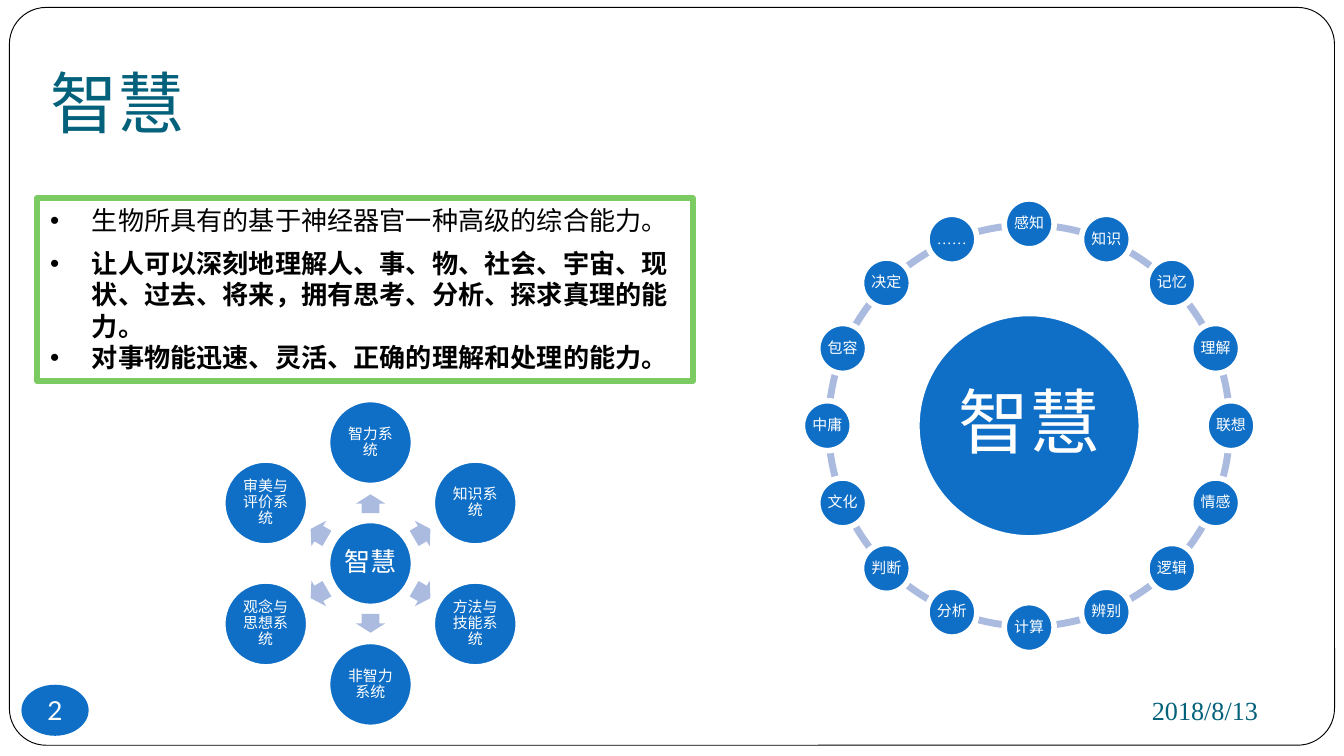
import math
import pptx
import pptx.util
import pptx.dml.color
import pptx.enum.shapes
import pptx.enum.text
import pptx.oxml.ns
from lxml import etree

HUES = {
    "blue": "0F6FC6", "pale": "ABBBDF", "teal": "04617B",
    "green": "7CCA62", "white": "FFFFFF", "black": "000000",
}
WIDE = 10
HIGH = WIDE * 9 / 16
COLS = 100
UNIT = WIDE / COLS
KIND = pptx.enum.shapes.MSO_SHAPE
ALIGN = pptx.enum.text.PP_ALIGN
ANCHOR = pptx.enum.text.MSO_ANCHOR
SERIF = "Times New Roman"

RING = ["感知", "知识", "记忆", "理解", "联想", "情感", "逻辑", "辨别",
        "计算", "分析", "判断", "文化", "中庸", "包容", "决定", "……"]
HUB = ["智力系统", "知识系统", "方法与技能系统",
       "非智力系统", "观念与思想系统", "审美与评价系统"]
POINTS = [
    "生物所具有的基于神经器官一种高级的综合能力。",
    "让人可以深刻地理解人、事、物、社会、宇宙、现状、过去、将来，拥有思考、分析、探求真理的能力。",
    "对事物能迅速、灵活、正确的理解和处理的能力。",
]


def grid(count):
    return pptx.util.Inches(count * UNIT)


def hue(name):
    return pptx.dml.color.RGBColor.from_string(HUES[name])


def square(mid, size):
    return mid[0] - size / 2, mid[1] - size / 2, size, size


def orbit(mid, reach, angle):
    turn = math.radians(angle)
    return mid[0] + reach * math.cos(turn), mid[1] + reach * math.sin(turn)


def draw(slide, kind, box, fill, line=None, width=3):
    shape = slide.shapes.add_shape(kind, *map(grid, box))
    shape.shadow.inherit = False
    shape.fill.solid()
    shape.fill.fore_color.rgb = hue(fill)
    if line:
        shape.line.color.rgb = hue(line)
        shape.line.width = pptx.util.Pt(width)
    else:
        shape.line.fill.background()
    return shape


def setup(shape, inset=(1, 0.5, 1, 0.5), anchor=ANCHOR.MIDDLE, wrap=True):
    frame = shape.text_frame
    frame.word_wrap = wrap
    frame.auto_size = pptx.enum.text.MSO_AUTO_SIZE.NONE
    frame.vertical_anchor = anchor
    sides = map(grid, inset)
    frame.margin_left, frame.margin_top, frame.margin_right, frame.margin_bottom = sides
    return frame


def write(para, text, size, font=SERIF, color="white", align=ALIGN.CENTER,
          bold=False, bullet=False, space=None, after=0):
    para.alignment = align
    para.space_after = pptx.util.Pt(after)
    if space:
        para.line_spacing = space
    if bullet:
        props = para._p.get_or_add_pPr()
        props.set("marL", str(grid(3.1)))
        props.set("indent", str(-grid(3.1)))
        face = etree.SubElement(props, pptx.oxml.ns.qn("a:buFont"))
        face.set("typeface", "Arial")
        mark = etree.SubElement(props, pptx.oxml.ns.qn("a:buChar"))
        mark.set("char", "•")
    run = para.add_run()
    run.text = text
    run.font.size = pptx.util.Pt(size)
    run.font.name = font
    run.font.bold = bold
    run.font.color.rgb = hue(color)


def disc(slide, mid, width, text, size, inset):
    shape = draw(slide, KIND.OVAL, square(mid, width), "blue", "white")
    frame = setup(shape, [inset] * 4)
    write(frame.paragraphs[0], text, size, space=0.9)


def border(slide, box):
    shape = draw(slide, KIND.ROUNDED_RECTANGLE, box, "white", "black", 0.5)
    shape.adjustments[0] = 0.05
    slide.shapes.element.insert(2, shape.element)


def heading(slide, box, text):
    title = slide.shapes.title
    title.left, title.top, title.width, title.height = map(grid, box)
    frame = setup(title, (1, 0.5, 1, 1), ANCHOR.BOTTOM)
    write(frame.paragraphs[0], text, 36, font="Lato", color="teal", align=ALIGN.LEFT)


def panel(slide, box, lines):
    shape = draw(slide, KIND.RECTANGLE, box, "white", "green")
    frame = setup(shape, anchor=ANCHOR.TOP)
    for rank, text in enumerate(lines):
        para = frame.add_paragraph() if rank else frame.paragraphs[0]
        write(para, text, 14, font="Arial", color="black", align=ALIGN.LEFT,
              bold=rank > 0, bullet=True, after=0 if rank else 6)


def ring(slide, box, core, names):
    left, top, width, height = box
    mid = left + width / 2, top + height / 2
    node = width * 0.11
    step = 360 / len(names)
    turns = [270 + step * rank for rank in range(len(names))]
    for turn in turns:
        arc = draw(slide, KIND.BLOCK_ARC, square(mid, width * 0.9), "pale")
        arc.adjustments[0] = turn % 360 * 0.6
        arc.adjustments[1] = (turn + step) % 360 * 0.6
        arc.adjustments[2] = 0.017
    disc(slide, mid, 16.7, core, 38, 0.5)
    for turn, name in zip(turns, names):
        disc(slide, orbit(mid, (width - node) / 2, turn), node, name, 8, 0.1)


def hub(slide, box, core, names):
    left, top, width, height = box
    mid = left + width / 2, top + height / 2
    node = 6.4
    disc(slide, mid, node, core, 14, 0.2)
    for rank, name in enumerate(names):
        turn = 270 + 360 / len(names) * rank
        x, y = orbit(mid, 4.45, turn)
        arrow = draw(slide, KIND.RIGHT_ARROW, (x - 0.7, y - 1.1, 1.4, 2.2), "pale")
        arrow.adjustments[0] = 0.6
        arrow.rotation = turn % 360
        disc(slide, orbit(mid, (width - node) / 2, turn), node, name, 8, 0.1)


def footer(slide, box, page, date):
    left, top, width, height = box
    badge = draw(slide, KIND.OVAL, (left, top, 5, height), "blue")
    frame = setup(badge, [0] * 4, wrap=False)
    write(frame.paragraphs[0], page, 14, font="Lato")
    span = 27.1
    label = slide.shapes.add_textbox(*map(grid, (left + width - span, top, span, height)))
    write(setup(label).paragraphs[0], date, 14, color="teal", align=ALIGN.RIGHT)


def main():
    deck = pptx.Presentation()
    deck.slide_width = pptx.util.Inches(WIDE)
    deck.slide_height = pptx.util.Inches(HIGH)
    slide = deck.slides.add_slide(deck.slide_layouts[5])
    border(slide, (0.7, 0.55, 98.6, 54.9))
    heading(slide, (2.75, 2.3, 92.2, 9.3), "智慧")
    footer(slide, (1.6, 50.95, 93, 3.8), "2", "2018/8/13")
    ring(slide, (59.7, 14.8, 33.75, 33.75), "智慧", RING)
    panel(slide, (2.75, 14.75, 48.8, 13.6), POINTS)
    hub(slide, (15.37, 29.73, 24.4, 24.4), "智慧", HUB)
    deck.save("out.pptx")


if __name__ == "__main__":
    main()
